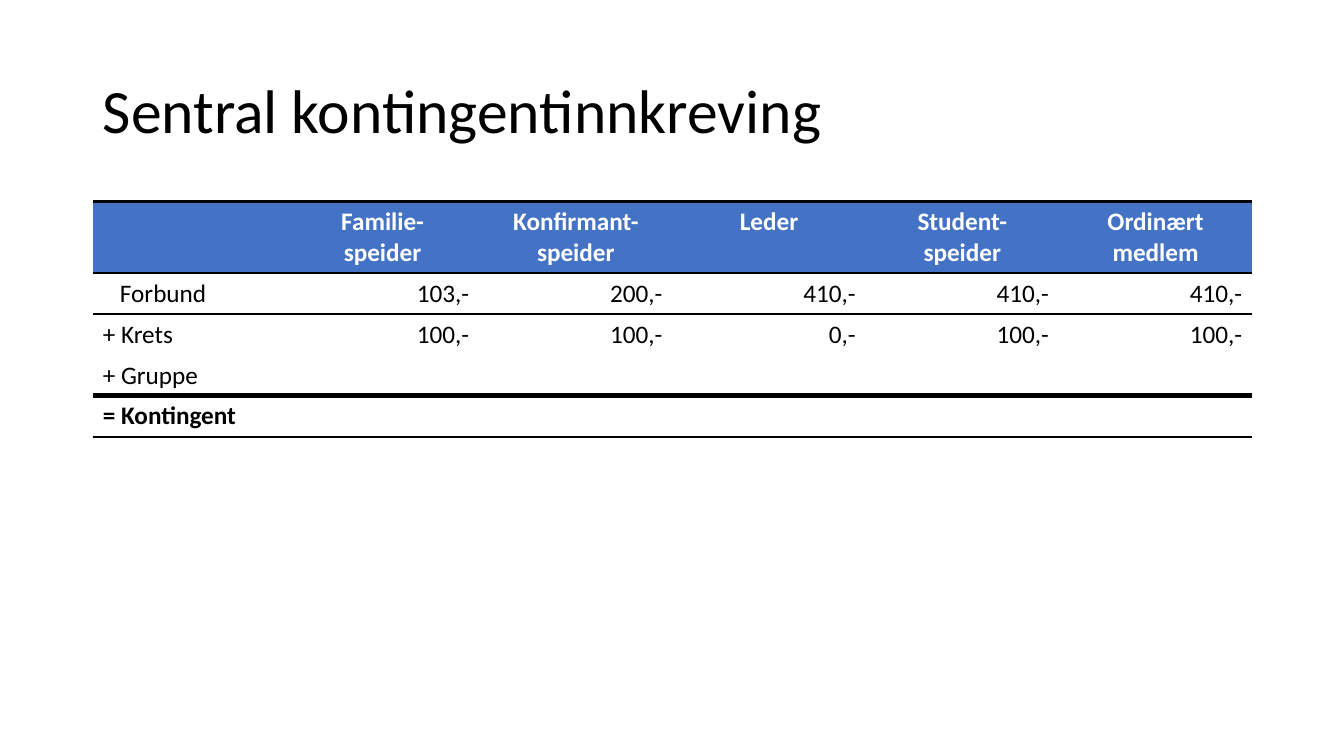
from lxml import etree
from pptx import Presentation
from pptx import util as u
from pptx.dml.color import RGBColor
from pptx.enum import text
from pptx.oxml.ns import qn

FONT = "Calibri"
BLACK, WHITE, BLUE = "000000", "FFFFFF", "4472C4"
PLAIN_STYLE = "{2D5ABB26-0587-4C30-8999-92F81FD0307C}"
HEADER_HEIGHT, ROW_HEIGHT = 0.7, 0.405
LABEL_INDENT = 0.17

FEES = [
    ["", "Familie-\nspeider", "Konfirmant-\nspeider", "Leder",
     "Student-\nspeider", "Ordinært\nmedlem"],
    ["Forbund", "103,-", "200,-", "410,-", "410,-", "410,-"],
    ["+ Krets", "100,-", "100,-", "0,-", "100,-", "100,-"],
    ["+ Gruppe", "", "", "", "", ""],
    ["= Kontingent", "", "", "", "", ""],
]
# Row number: width in points of the rule above and below it
RULES = {0: (2, 2), 1: (2, None), 3: (None, 4), 4: (4, 2)}


def color(value):
    return RGBColor.from_string(value)


def set_font(paragraph, size, shade, bold=False):
    font = paragraph.font
    font.name, font.size, font.bold = FONT, u.Pt(size), bold
    font.color.rgb = color(shade)


def add_rule(cell, side, width):
    """Draw a black line on one side of a cell; call before filling it."""
    line = etree.SubElement(cell._tc.get_or_add_tcPr(), qn("a:" + side),
                            w=str(u.Pt(width)), cmpd="sng")
    fill = etree.SubElement(line, qn("a:solidFill"))
    etree.SubElement(fill, qn("a:srgbClr"), val=BLACK)
    etree.SubElement(line, qn("a:prstDash"), val="solid")


def add_title(page, box, words):
    title = page.shapes.title
    title.left, title.top, title.width, title.height = map(u.Inches, box)
    frame = title.text_frame
    frame.word_wrap = True
    frame.auto_size = text.MSO_AUTO_SIZE.NONE
    frame.vertical_anchor = text.MSO_ANCHOR.MIDDLE
    para = frame.paragraphs[0]
    para.text = words
    para.alignment = text.PP_ALIGN.LEFT
    para.line_spacing = 0.9
    set_font(para, 44, BLACK)


def fill_cell(cell, words, row, column):
    header = row == 0
    for side, width in zip(("lnT", "lnB"), RULES.get(row, (None, None))):
        if width:
            add_rule(cell, side, width)
    cell.fill.solid()
    cell.fill.fore_color.rgb = color(BLUE if header else WHITE)
    para = cell.text_frame.paragraphs[0]
    para.text = words
    if header:
        para.alignment = text.PP_ALIGN.CENTER
    else:
        para.alignment = text.PP_ALIGN.RIGHT if column else text.PP_ALIGN.LEFT
    set_font(para, 18, WHITE if header else BLACK, header or row == len(FEES) - 1)


def add_fee_table(page, box):
    frame = page.shapes.add_table(len(FEES), len(FEES[0]), *map(u.Inches, box))
    table = frame.table
    table._tbl.tblPr.find(qn("a:tableStyleId")).text = PLAIN_STYLE
    table.horz_banding = False
    for column in table.columns:
        column.width = u.Inches(box[2] / len(FEES[0]))
    for row, values in enumerate(FEES):
        table.rows[row].height = u.Inches(ROW_HEIGHT if row else HEADER_HEIGHT)
        for column, words in enumerate(values):
            fill_cell(table.cell(row, column), words, row, column)
    # The first label has no sign, so it is indented to line up with the rest
    table.cell(1, 0).margin_left = u.Inches(0.1 + LABEL_INDENT)


def main():
    deck = Presentation()
    deck.slide_width, deck.slide_height = u.Inches(13.33), u.Inches(7.5)
    page = deck.slides.add_slide(deck.slide_layouts[5])
    left, width = 0.92, 11.5
    add_title(page, (left, 0.4, width, 1.45), "Sentral kontingentinnkreving")
    table_height = HEADER_HEIGHT + ROW_HEIGHT * (len(FEES) - 1)
    add_fee_table(page, (left, 2, width, table_height))
    deck.save("out.pptx")


if __name__ == "__main__":
    main()
